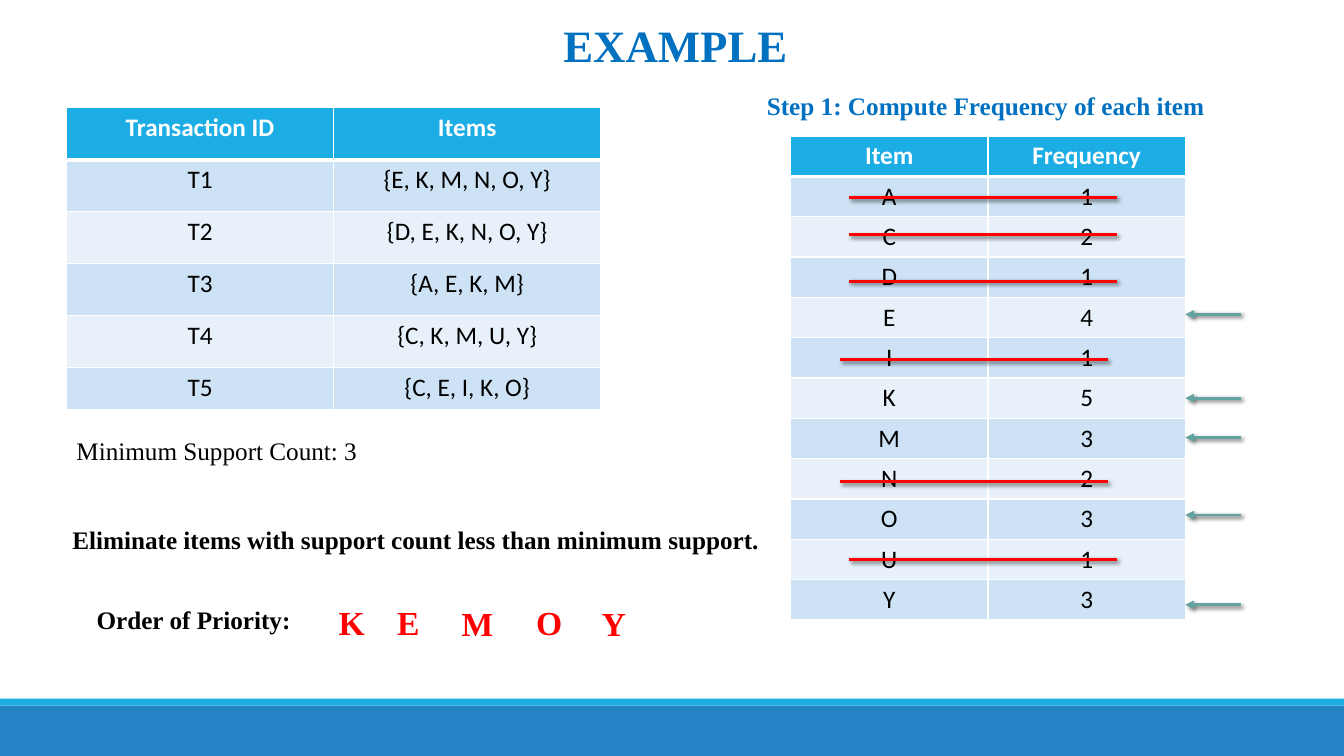
from dataclasses import dataclass

from lxml import etree
from pptx import Presentation
from pptx.dml.color import RGBColor
from pptx.enum.shapes import MSO_CONNECTOR, MSO_SHAPE
from pptx.enum.text import MSO_ANCHOR, MSO_AUTO_SIZE, PP_ALIGN
from pptx.oxml import parse_xml
from pptx.oxml.ns import qn
from pptx.util import Pt

RECTANGLE = MSO_SHAPE.RECTANGLE
STRAIGHT = MSO_CONNECTOR.STRAIGHT
CENTER = PP_ALIGN.CENTER
TOP, MIDDLE = MSO_ANCHOR.TOP, MSO_ANCHOR.MIDDLE
GROW = MSO_AUTO_SIZE.SHAPE_TO_FIT_TEXT

WHITE = RGBColor(0xFF, 0xFF, 0xFF)
BLACK = RGBColor(0x00, 0x00, 0x00)
RED = RGBColor(0xFF, 0x00, 0x00)
TITLE_BLUE = RGBColor(0x00, 0x70, 0xC0)
FOOTER_BLUE = RGBColor(0x26, 0x83, 0xC6)
ACCENT_BLUE = RGBColor(0x1C, 0xAD, 0xE4)
BAND_DARK = RGBColor(0xCD, 0xE3, 0xF5)
BAND_LIGHT = RGBColor(0xE8, 0xF1, 0xFA)
TEAL = RGBColor(0x62, 0xA3, 0x9F)

DRAWING_NS = "http://schemas.openxmlformats.org/drawingml/2006/main"
SHADOW_XML = (
    f'<a:effectLst xmlns:a="{DRAWING_NS}">'
    f'<a:outerShdw blurRad="{Pt(3)}" dist="{Pt(2)}" dir="2700000" rotWithShape="0">'
    '<a:srgbClr val="000000"><a:alpha val="60000"/></a:srgbClr>'
    "</a:outerShdw></a:effectLst>"
)


@dataclass
class Label:
    text: str
    left: float
    top: float
    width: float
    height: float = 29
    size: float = 18
    color: RGBColor = BLACK
    bold: bool = True


@dataclass
class Grid:
    left: float
    top: float
    column_width: float
    row_heights: list[float]
    rows: list[tuple[str, str]]
    first_column_anchor: MSO_ANCHOR
    margin: float


@dataclass
class Line:
    start: float
    end: float
    y: float
    color: RGBColor
    arrow: bool = False


def add_bar(page, top: float, height: float, color: RGBColor) -> None:
    bar = page.shapes.add_shape(RECTANGLE, 0, Pt(top), Pt(960), Pt(height))
    bar.shadow.inherit = False
    bar.fill.solid()
    bar.fill.fore_color.rgb = color
    bar.line.fill.background()


def add_label(page, label: Label) -> None:
    box = page.shapes.add_textbox(
        Pt(label.left), Pt(label.top), Pt(label.width), Pt(label.height)
    )
    frame = box.text_frame
    frame.word_wrap = True
    frame.auto_size = GROW
    para = frame.paragraphs[0]
    para.text = label.text
    para.font.name = "Times New Roman"
    para.font.size = Pt(label.size)
    para.font.bold = label.bold
    para.font.color.rgb = label.color


def set_borders(cell, top: float, bottom: float) -> None:
    widths = {"lnL": 1, "lnR": 1, "lnT": top, "lnB": bottom}
    properties = cell._tc.get_or_add_tcPr()
    for index, (side, width) in enumerate(widths.items()):
        border = etree.Element(qn(f"a:{side}"), w=str(Pt(width)))
        fill = etree.SubElement(border, qn("a:solidFill"))
        etree.SubElement(fill, qn("a:srgbClr"), val=str(WHITE))
        properties.insert(index, border)


def add_grid(page, grid: Grid) -> None:
    table = page.shapes.add_table(
        len(grid.rows), 2, Pt(grid.left), Pt(grid.top),
        Pt(2 * grid.column_width), Pt(sum(grid.row_heights)),
    ).table
    for column in table.columns:
        column.width = Pt(grid.column_width)
    for r, (height, texts) in enumerate(zip(grid.row_heights, grid.rows)):
        table.rows[r].height = Pt(height)
        header = r == 0
        band = ACCENT_BLUE if header else BAND_DARK if r % 2 else BAND_LIGHT
        for c, text in enumerate(texts):
            cell = table.cell(r, c)
            cell.fill.solid()
            cell.fill.fore_color.rgb = band
            cell.margin_top = cell.margin_bottom = Pt(grid.margin)
            cell.vertical_anchor = TOP if header or c else grid.first_column_anchor
            set_borders(cell, 3 if r == 1 else 1, 3 if header else 1)
            para = cell.text_frame.paragraphs[0]
            para.text = text
            para.alignment = CENTER
            para.font.name = "Calibri"
            para.font.size = Pt(18)
            para.font.bold = header
            para.font.color.rgb = WHITE if header else BLACK


def add_line(page, line: Line) -> None:
    connector = page.shapes.add_connector(
        STRAIGHT, Pt(line.start), Pt(line.y), Pt(line.end), Pt(line.y)
    )
    connector.line.color.rgb = line.color
    connector.line.width = Pt(2)
    if line.arrow:
        outline = connector.line._get_or_add_ln()
        etree.SubElement(outline, qn("a:tailEnd"), type="triangle")
    connector._element.spPr.append(parse_xml(SHADOW_XML))


TRANSACTIONS = Grid(
    47.5, 77, 190.8, [37.1] * 5 + [30],
    [
        ("Transaction ID", "Items"),
        ("T1", "{E, K, M, N, O, Y}"),
        ("T2", "{D, E, K, N, O, Y}"),
        ("T3", "{A, E, K, M}"),
        ("T4", "{C, K, M, U, Y}"),
        ("T5", "{C, E, I, K, O}"),
    ],
    TOP, 3.6,
)
FREQUENCIES = Grid(
    564.7, 97.2, 141, [28.8] * 12,
    [("Item", "Frequency"), *zip("ACDEIKMNOUY", "12141532313")],
    MIDDLE, 3.4,
)

LABELS = [
    Label("EXAMPLE", 395.3, 9.4, 185.8, 46, 32, TITLE_BLUE),
    Label("Step 1: Compute Frequency of each item", 540.7, 61.2, 336.2, color=TITLE_BLUE),
    Label("Minimum Support Count: 3", 47.5, 307.4, 247.7, bold=False),
    Label("Eliminate items with support count less than minimum support.", 44.6, 370.8, 518.4),
    Label("Order of Priority:", 61.9, 428.4, 159.1),
]
PRIORITY = [  # letter, left, top, width
    ("K", 234.7, 426.2, 44.6),
    ("E", 276.5, 426.2, 49.7),
    ("M", 322.6, 427, 44.6),
    ("O", 375.8, 426.2, 34.6),
    ("Y", 422.6, 427, 44.6),
]
STRIKES = [  # left, y
    (606.2, 141.1), (606.2, 167.8), (606.2, 200.9),
    (599.8, 257), (599.8, 344.2), (606.2, 399.6),
]
STRIKE_LENGTH = 191.5
ARROW_HEIGHTS = [224.6, 284.4, 312.5, 367.9, 432]


def main() -> None:
    deck = Presentation()
    deck.slide_width, deck.slide_height = Pt(960), Pt(540)
    page = deck.slides.add_slide(deck.slide_layouts[6])

    # Footer bars
    add_bar(page, 504, 36, FOOTER_BLUE)
    add_bar(page, 499, 5, ACCENT_BLUE)

    # Tables
    for grid in (TRANSACTIONS, FREQUENCIES):
        add_grid(page, grid)

    # Headings, notes and the priority letters
    for label in LABELS:
        add_label(page, label)
    for letter, left, top, width in PRIORITY:
        add_label(page, Label(letter, left, top, width, 36, 24, RED))

    # Eliminated items are struck out, kept items get an arrow
    for left, y in STRIKES:
        add_line(page, Line(left, left + STRIKE_LENGTH, y, RED))
    for y in ARROW_HEIGHTS:
        add_line(page, Line(886.3, 846.7, y, TEAL, arrow=True))

    deck.save("out.pptx")


if __name__ == "__main__":
    main()
